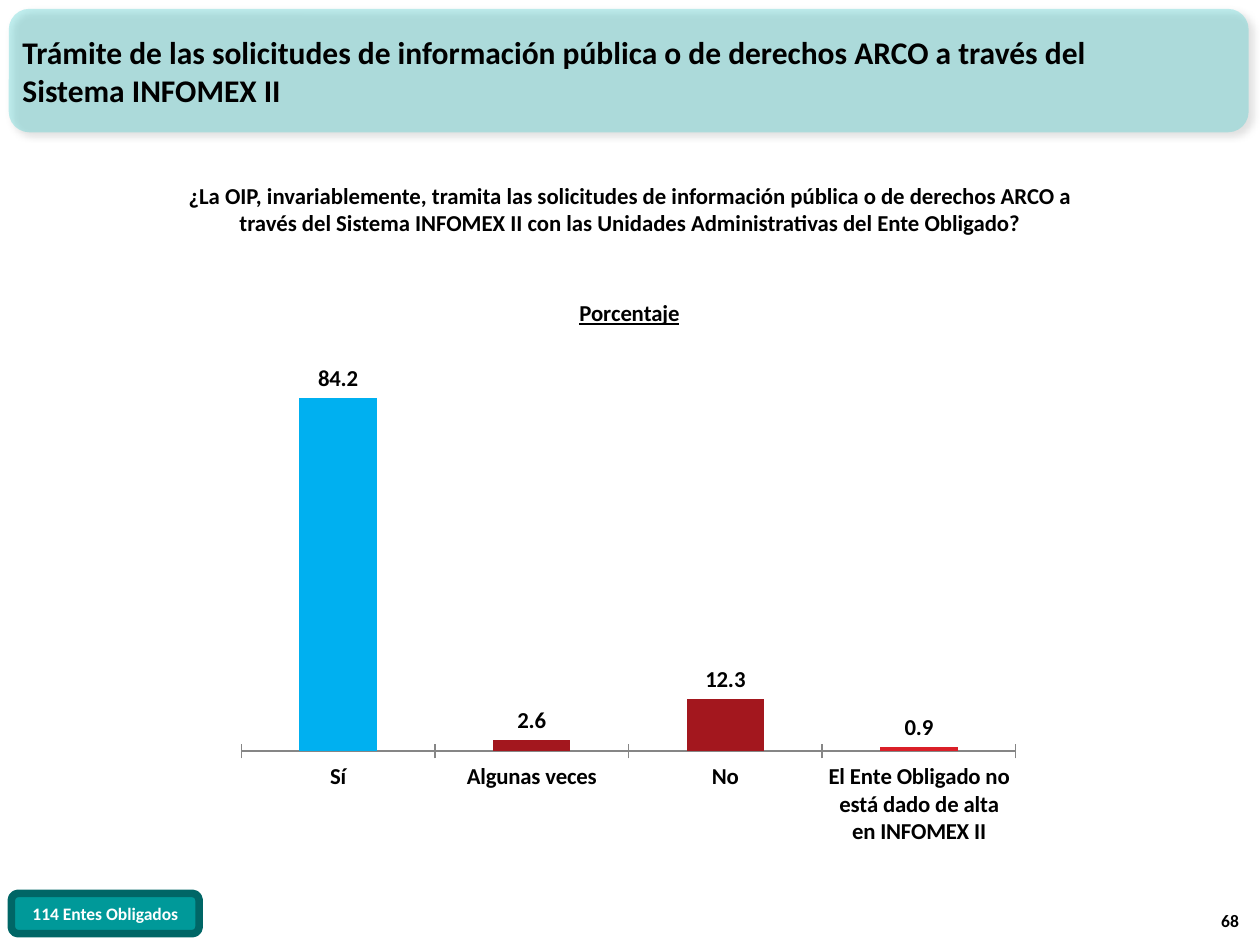
from dataclasses import dataclass

from lxml import etree
from pptx import Presentation
from pptx.chart.data import CategoryChartData
from pptx.dml.color import RGBColor
from pptx.enum.chart import XL_CHART_TYPE, XL_LABEL_POSITION, XL_TICK_MARK
from pptx.enum.shapes import MSO_SHAPE
from pptx.enum.text import MSO_ANCHOR, PP_ALIGN
from pptx.oxml import parse_xml
from pptx.oxml.ns import nsdecls, qn
from pptx.util import Inches, Pt

COLUMNS = XL_CHART_TYPE.COLUMN_CLUSTERED
OUTSIDE_END = XL_LABEL_POSITION.OUTSIDE_END
TICK_CROSS, TICK_NONE = XL_TICK_MARK.CROSS, XL_TICK_MARK.NONE
ROUNDED = MSO_SHAPE.ROUNDED_RECTANGLE
TOP, MIDDLE, BOTTOM = MSO_ANCHOR.TOP, MSO_ANCHOR.MIDDLE, MSO_ANCHOR.BOTTOM
LEFT, CENTER, RIGHT = PP_ALIGN.LEFT, PP_ALIGN.CENTER, PP_ALIGN.RIGHT


@dataclass(frozen=True)
class Theme:
    font: str = "Calibri"
    heading: int = 18
    body: int = 13
    small: int = 10
    text: str = "000000"
    light: str = "FFFFFF"
    band: str = "33CCCC"
    badge: str = "009999"
    badge_line: str = "006666"
    axis: str = "868686"
    bars: tuple = ("00B0F0", "A3171E", "A3171E", "DA1F28")


theme = Theme()


def style_font(font, size, color=theme.text):
    font.name = theme.font
    font.size = Pt(size)
    font.bold = True
    font.color.rgb = RGBColor.from_string(color)


def write_text(shape, text, size, align, anchor, color=theme.text):
    frame = shape.text_frame
    frame.word_wrap = True
    frame.vertical_anchor = anchor
    paragraph = frame.paragraphs[0]
    paragraph.text = text
    paragraph.alignment = align
    style_font(paragraph.font, size, color)


presentation = Presentation()
presentation.slide_width = Inches(10)
presentation.slide_height = Inches(7.5)
slide = presentation.slides.add_slide(presentation.slide_layouts[6])
shapes = slide.shapes

# Header band: translucent fill with a soft shadow
band = shapes.add_shape(ROUNDED, Inches(0.07), Inches(0.07), Inches(9.84), Inches(0.98))
band.fill.solid()
band.fill.fore_color.rgb = RGBColor.from_string(theme.band)
band.line.fill.background()
band_color = band._element.spPr.find(qn("a:solidFill"))[0]
etree.SubElement(band_color, qn("a:alpha"), val="30000")
band._element.spPr.append(parse_xml(
    f'<a:effectLst {nsdecls("a")}>'
    f'<a:outerShdw blurRad="{Pt(4)}" dist="{Pt(3)}" dir="2700000" algn="tl" rotWithShape="0">'
    f'<a:srgbClr val="{theme.text}"><a:alpha val="40000"/></a:srgbClr>'
    '</a:outerShdw></a:effectLst>'))

# Page number, question and heading
texts = [
    ("68", (9.45, 7.04, 0.48, 0.4), theme.small, RIGHT, BOTTOM),
    ("¿La OIP, invariablemente, tramita las solicitudes de información pública o de "
     "derechos ARCO a través del Sistema INFOMEX II con las Unidades Administrativas "
     "del Ente Obligado?", (1.3, 1.39, 7.39, 0.54), theme.body, CENTER, TOP),
    ("Trámite de las solicitudes de información pública o de derechos ARCO a través "
     "del Sistema INFOMEX II", (0.08, 0.09, 9.29, 0.94), theme.heading, LEFT, MIDDLE),
]
for text, box, size, align, anchor in texts:
    text_box = shapes.add_textbox(*map(Inches, box))
    write_text(text_box, text, size, align, anchor)

# Column chart
data = CategoryChartData(number_format="#,##0.0")
data.categories = ["Sí", "Algunas veces", "No",
                   "El Ente Obligado no está dado de alta en INFOMEX II"]
data.add_series("Porcentaje", (84.2, 2.6, 12.3, 0.9))
chart = shapes.add_chart(COLUMNS, Inches(1.69), Inches(2.18),
                         Inches(6.61), Inches(4.88), data).chart
style_font(chart.font, theme.body)
chart.has_legend = False

chart.has_title = True
title = chart.chart_title.text_frame.paragraphs[0]
title.text = "Porcentaje"
style_font(title.font, theme.body)
title.font.underline = True
for overlay in chart.chart_title._element.findall(qn("c:overlay")):
    overlay.set("val", "1")

category_axis = chart.category_axis
category_axis.major_tick_mark = TICK_CROSS
category_axis.minor_tick_mark = TICK_NONE
category_axis.format.line.color.rgb = RGBColor.from_string(theme.axis)
value_axis = chart.value_axis
value_axis.minimum_scale, value_axis.maximum_scale = 0, 90
value_axis.major_unit = 5
value_axis.has_major_gridlines = False
value_axis.visible = False

plot = chart.plots[0]
plot.gap_width = 150
plot.vary_by_categories = False
plot.has_data_labels = True
labels = plot.data_labels
labels.show_value = True
labels.number_format = "#,##0.0"
labels.number_format_is_linked = False
labels.position = OUTSIDE_END
style_font(labels.font, theme.body)
for index, color in enumerate(theme.bars):
    fill = plot.series[0].points[index].format.fill
    fill.solid()
    fill.fore_color.rgb = RGBColor.from_string(color)

# Fixed inner plot area, as fractions of the chart
plot_area = chart._chartSpace.chart.plotArea
for old_layout in plot_area.findall(qn("c:layout")):
    plot_area.remove(old_layout)
layout = etree.Element(qn("c:layout"))
manual = etree.SubElement(layout, qn("c:manualLayout"))
for tag, value in (("layoutTarget", "inner"), ("xMode", "edge"), ("yMode", "edge"),
                   ("x", "0.034"), ("y", "0.161"), ("w", "0.93"), ("h", "0.614")):
    etree.SubElement(manual, qn(f"c:{tag}"), val=value)
plot_area.insert(0, layout)

# Badge with the number of respondents
badge = shapes.add_shape(ROUNDED, Inches(0.09), Inches(7.09), Inches(1.49), Inches(0.32))
badge.shadow.inherit = False
badge.fill.solid()
badge.fill.fore_color.rgb = RGBColor.from_string(theme.badge)
badge.line.color.rgb = RGBColor.from_string(theme.badge_line)
badge.line.width = Pt(4.33)
write_text(badge, "114 Entes Obligados", theme.small, CENTER, MIDDLE, theme.light)

presentation.save("out.pptx")
